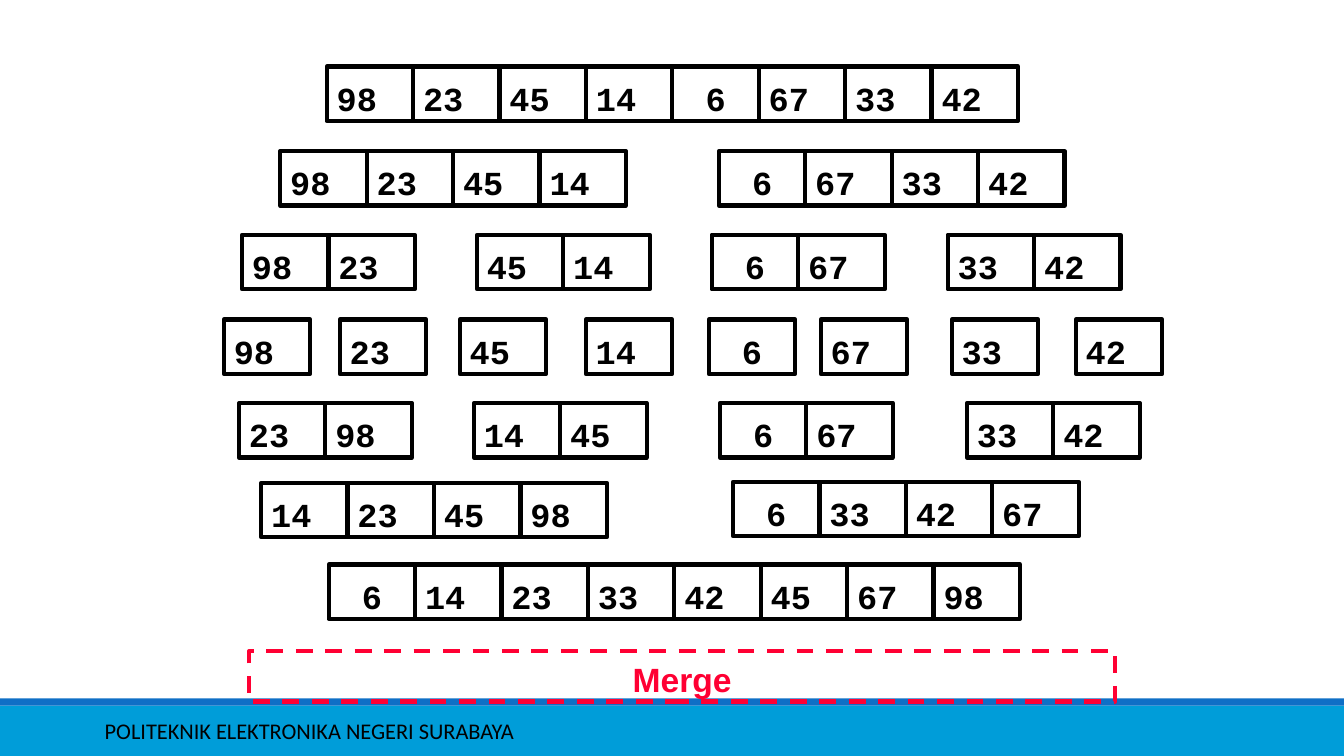
"""Build a slide that traces merge sort from splitting to the final merge."""
import pptx
import pptx.dml.color
import pptx.enum.dml
import pptx.enum.shapes
import pptx.enum.text
import pptx.util

Inches = pptx.util.Inches
ALIGN = pptx.enum.text.PP_ALIGN
ANCHOR = pptx.enum.text.MSO_ANCHOR

SORT_STEPS = [
    (0.66, [(3.24, [98, 23, 45, 14, 6, 67, 33, 42])]),
    (1.5, [(2.78, [98, 23, 45, 14]), (7.13, [6, 67, 33, 42])]),
    (2.33, [(2.4, [98, 23]), (4.73, [45, 14]), (7.06, [6, 67]), (9.4, [33, 42])]),
    (3.17, [(2.22, [98]), (3.37, [23]), (4.56, [45]), (5.81, [14]),
            (7.03, [6]), (8.14, [67]), (9.44, [33]), (10.67, [42])]),
    (4, [(2.37, [23, 98]), (4.7, [14, 45]), (7.14, [6, 67]), (9.59, [33, 42])]),
    (4.79, [(2.59, [14, 23, 45, 98])]),
    (4.78, [(7.27, [6, 33, 42, 67])]),
    (5.6, [(3.26, [6, 14, 23, 33, 42, 45, 67, 98])]),
]
CELL_WIDTH, CELL_HEIGHT = 6 / 7, 0.54
FOOTER_BANDS = [((0, 7, 13.33, 0.5), "009DD9"), ((0, 6.93, 13.33, 0.07), "0F6FC6")]
SCHOOL = "POLITEKNIK ELEKTRONIKA NEGERI SURABAYA"
FONTS = {
    "cell": {"name": "Courier New", "size": pptx.util.Pt(24), "bold": True},
    "phase": {"name": "Arial", "size": pptx.util.Pt(24), "bold": True},
    "school": {"name": "Calibri", "size": pptx.util.Pt(16), "bold": False},
}
FRAMES = {
    "cell": {"word_wrap": True, "vertical_anchor": ANCHOR.TOP,
             "margin_top": Inches(0.11), "margin_bottom": 0},
    "phase": {"word_wrap": True, "vertical_anchor": ANCHOR.TOP,
              "margin_top": Inches(0.08), "margin_bottom": Inches(0.02)},
    "school": {"word_wrap": True, "vertical_anchor": ANCHOR.MIDDLE},
}


def paint(color_format, value):
    color_format.rgb = pptx.dml.color.RGBColor.from_string(value)


def apply(target, values):
    for attribute, value in values.items():
        setattr(target, attribute, value)


def add_rect(slide, place, fill=None, outline=None):
    rect = slide.shapes.add_shape(
        pptx.enum.shapes.MSO_SHAPE.RECTANGLE, *map(Inches, place))
    rect.shadow.inherit = False
    if fill:
        rect.fill.solid()
        paint(rect.fill.fore_color, fill)
    else:
        rect.fill.background()
    if outline:
        paint(rect.line.color, outline)
        rect.line.width = pptx.util.Pt(3)
    else:
        rect.line.fill.background()
    return rect


def write(shape, words, role, color, align=ALIGN.LEFT):
    frame = shape.text_frame
    apply(frame, FRAMES[role])
    line = frame.paragraphs[0]
    line.alignment = align
    run = line.add_run()
    run.text = words
    apply(run.font, FONTS[role])
    paint(run.font.color, color)


def main():
    deck = pptx.Presentation()
    apply(deck, {"slide_width": Inches(13.33), "slide_height": Inches(7.5)})
    slide = deck.slides.add_slide(deck.slide_layouts[6])

    for place, fill in FOOTER_BANDS:
        add_rect(slide, place, fill=fill)
    school = slide.shapes.add_textbox(*map(Inches, (0.94, 7.05, 8.41, 0.4)))
    write(school, SCHOOL, "school", "000000")

    for top, groups in SORT_STEPS:
        for left, numbers in groups:
            for index, number in enumerate(numbers):
                place = (left + index * CELL_WIDTH, top, CELL_WIDTH, CELL_HEIGHT)
                cell = add_rect(slide, place, outline="000000")
                align = ALIGN.CENTER if number < 10 else ALIGN.LEFT
                write(cell, str(number), "cell", "000000", align)

    phase = add_rect(slide, (2.47, 6.46, 8.59, 0.5), outline="FF0033")
    phase.line.dash_style = pptx.enum.dml.MSO_LINE.DASH
    write(phase, "Merge", "phase", "FF0033", ALIGN.CENTER)

    deck.save("out.pptx")


if __name__ == "__main__":
    main()
